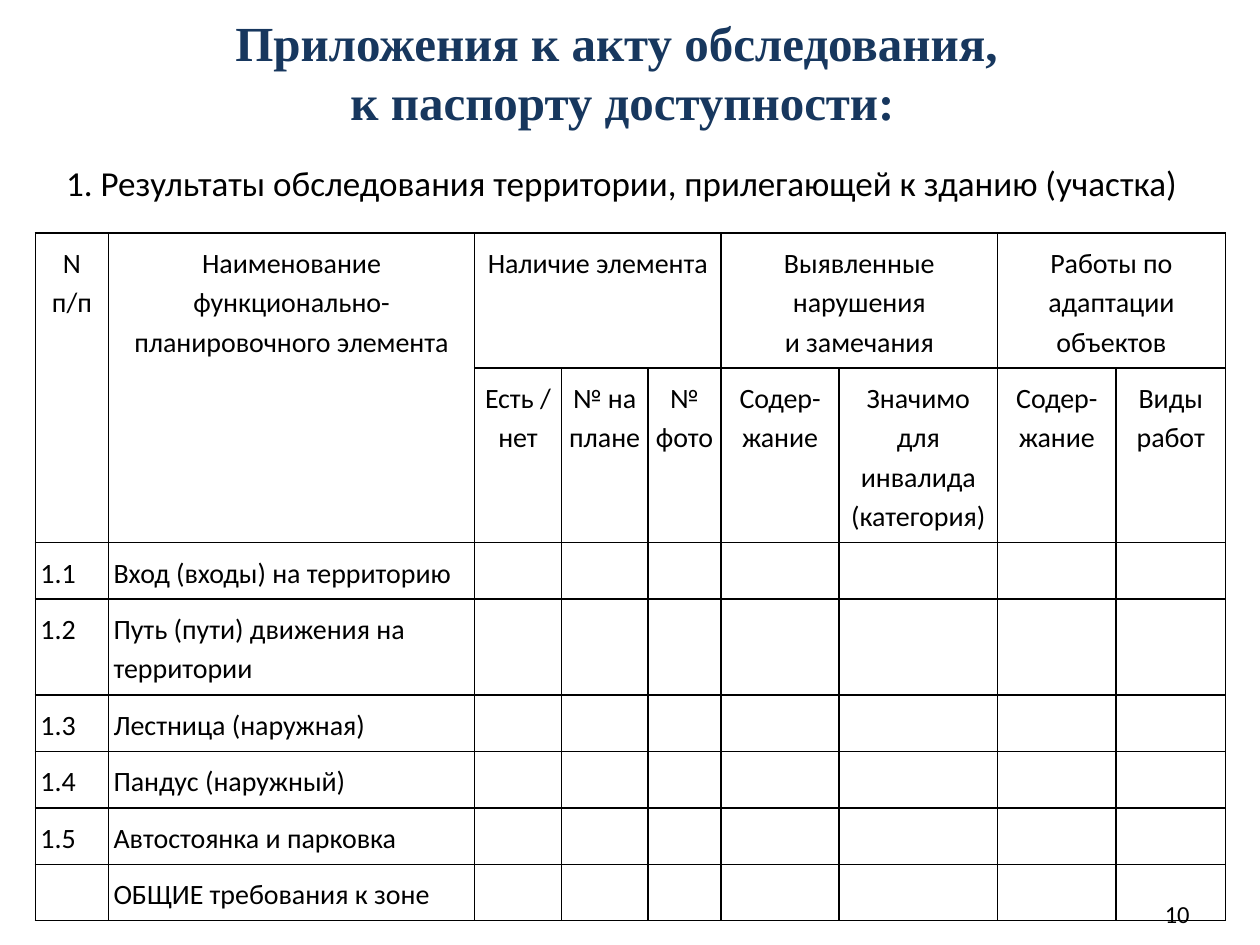
from pptx import Presentation
from pptx.dml.color import RGBColor
from pptx.enum.text import MSO_ANCHOR, MSO_AUTO_SIZE, PP_ALIGN
from pptx.oxml import parse_xml
from pptx.oxml.ns import nsdecls
from pptx.util import Pt

THEME = {
    "title": {"name": "Times New Roman", "size": Pt(28), "bold": True, "ink": "17375E"},
    "lead": {"name": "Calibri", "size": Pt(20), "bold": False, "ink": "000000"},
    "cell": {"name": "Calibri", "size": Pt(16), "bold": False, "ink": "000000"},
    "page": {"name": "Calibri", "size": Pt(14), "bold": False, "ink": "000000"},
    "rule": "000000",
}


def write(frame, text, style, align, **para):
    """Fill a text frame, one paragraph per line, in a theme style."""
    frame.text = text
    for par in frame.paragraphs:
        for key, val in {"alignment": align, "space_before": Pt(0), **para}.items():
            setattr(par, key, val)
        for run in par.runs:
            for key, val in THEME[style].items():
                if key == "ink":
                    run.font.color.rgb = RGBColor.from_string(val)
                else:
                    setattr(run.font, key, val)


def place(shape, box, anchor):
    """Set a text shape's place and frame format."""
    for key, val in zip(("left", "top", "width", "height"), box):
        setattr(shape, key, Pt(val))
    form = {"word_wrap": True, "auto_size": MSO_AUTO_SIZE.NONE,
            "vertical_anchor": anchor}
    for key, val in form.items():
        setattr(shape.text_frame, key, val)


deck = Presentation()
deck.slide_width, deck.slide_height = Pt(720), Pt(540)
slide = deck.slides.add_slide(deck.slide_layouts[1])

# Title
title = slide.shapes.title
place(title, (0, 3.6, 711.4, 74.9), MSO_ANCHOR.TOP)
write(title.text_frame, "Приложения к акту обследования, \nк паспорту доступности:",
      "title", PP_ALIGN.CENTER)

# Section line, without the list bullet
lead = slide.placeholders[1]
place(lead, (23.8, 88.6, 663.1, 31.7), MSO_ANCHOR.TOP)
write(lead.text_frame,
      "1. Результаты обследования территории, прилегающей к зданию (участка)",
      "lead", PP_ALIGN.CENTER)
props = lead.text_frame.paragraphs[0]._p.get_or_add_pPr()
props.set("marL", "0")
props.set("indent", "0")
props.append(parse_xml(f"<a:buNone {nsdecls('a')}/>"))

# Table content: two header rows, then numbered elements
heads = [
    ["N п/п", "Наименование функционально-планировочного элемента",
     "Наличие элемента", "", "", "Выявленные нарушения\nи замечания", "",
     "Работы по адаптации объектов", ""],
    ["", "", "Есть / нет", "№ на плане", "№ фото", "Содер-жание",
     "Значимо для инвалида (категория)", "Содер-жание", "Виды работ"],
]
items = [
    ("1.1", "Вход (входы) на территорию"),
    ("1.2", "Путь (пути) движения на территории"),
    ("1.3", "Лестница (наружная)"),
    ("1.4", "Пандус (наружный)"),
    ("1.5", "Автостоянка и парковка"),
    ("", "ОБЩИЕ требования к зоне"),
]
wides = [41.8, 209.3, 49.5, 49.5, 41.8, 67.5, 90.5, 67.8, 62.4]
highs = [76, 98.9, 32.2, 54.2, 32.2, 32.2, 32.2, 32.2]
rows = heads + [[*item] + [""] * (len(wides) - 2) for item in items]

# Table grid
frame = slide.shapes.add_table(len(rows), len(wides), Pt(20.2), Pt(133.2),
                               Pt(sum(wides)), Pt(sum(highs)))
table = frame.table
table.first_row = table.horz_banding = False
for col, wide in zip(table.columns, wides):
    col.width = Pt(wide)
for row, high in zip(table.rows, highs):
    row.height = Pt(high)

# Cells: text, margins, borders, no fill
pads = {"margin_left": Pt(2.9), "margin_right": Pt(2.9),
        "margin_top": Pt(4.9), "margin_bottom": Pt(4.9)}
for r, row in enumerate(rows):
    for c, text in enumerate(row):
        cell = table.cell(r, c)
        for key, val in pads.items():
            setattr(cell, key, val)
        if text:
            align = (PP_ALIGN.CENTER if r < len(heads) else
                     PP_ALIGN.JUSTIFY if c == 0 else PP_ALIGN.LEFT)
            write(cell.text_frame, text, "cell", align, line_spacing=1.15)
        for side in "LRTB":
            cell._tc.get_or_add_tcPr().append(parse_xml(
                f'<a:ln{side} {nsdecls("a")} w="{Pt(1)}"><a:solidFill>'
                f'<a:srgbClr val="{THEME["rule"]}"/></a:solidFill></a:ln{side}>'))
        cell.fill.background()

# Header spans
for top, left, end, right in [(0, 0, 1, 0), (0, 1, 1, 1), (0, 2, 0, 4),
                              (0, 5, 0, 6), (0, 7, 0, 8)]:
    table.cell(top, left).merge(table.cell(end, right))

# Page number
page = slide.shapes.add_textbox(0, 0, 0, 0)
place(page, (519.1, 507.6, 167.8, 28.8), MSO_ANCHOR.MIDDLE)
write(page.text_frame, "10", "page", PP_ALIGN.RIGHT)

deck.save("out.pptx")
